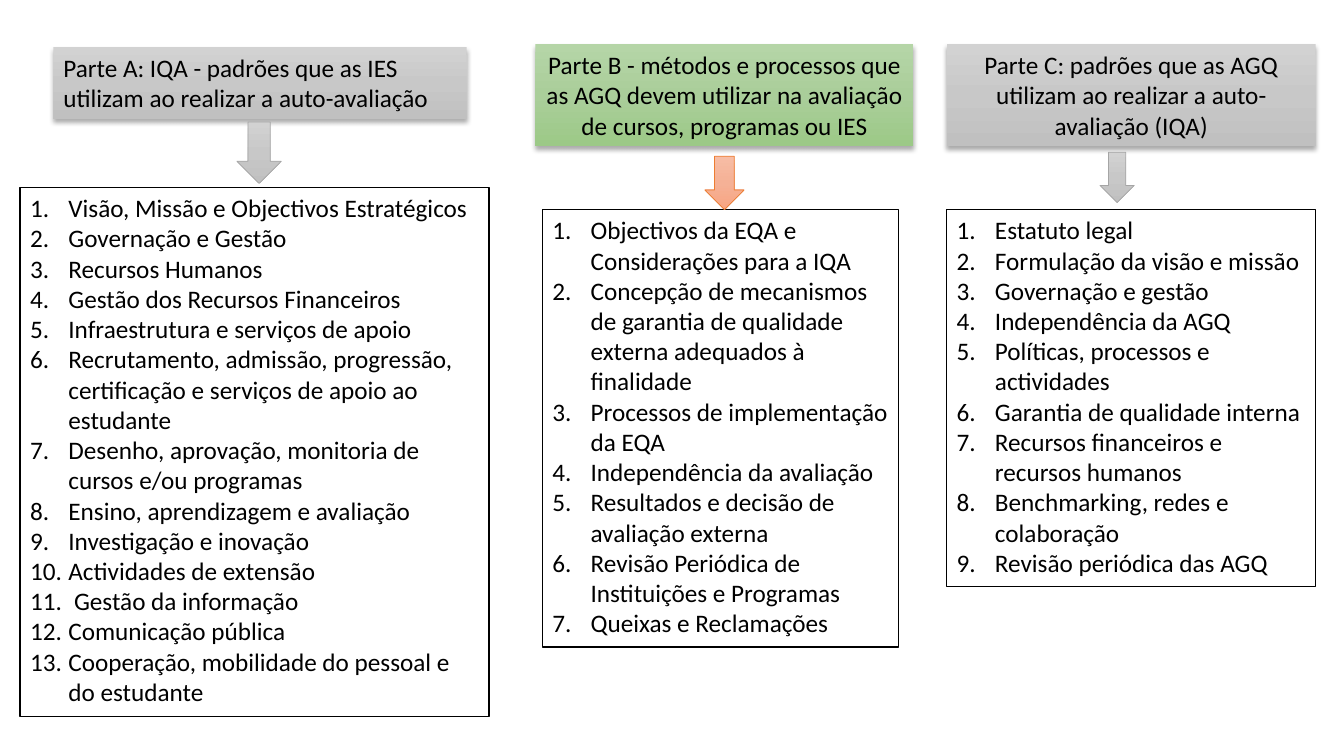
import copy

import pptx
import pptx.dml.color
import pptx.enum.shapes
import pptx.enum.text
import pptx.oxml
import pptx.oxml.ns
import pptx.util

Inches = pptx.util.Inches
MSO_SHAPE = pptx.enum.shapes.MSO_SHAPE
PP_ALIGN = pptx.enum.text.PP_ALIGN
qn = pptx.oxml.ns.qn

GREY = ("D2D2D2", "C8C8C8", "C0C0C0")
GREEN = ("B5D5A7", "AACE9A", "9CC987")
ORANGE = ("F7BDA5", "F5B196", "F8A582")

COLUMNS = [
    {
        "title": "Parte A: IQA - padrões que as IES utilizam ao realizar a auto-avaliação",
        "align": PP_ALIGN.LEFT,
        "header": (0.53, 0.47, 4.1, 0.71),
        "header_fill": GREY,
        "arrow": (2.35, 1.21, 0.44, 0.61),
        "arrow_fill": GREY,
        "arrow_line": "A5A5A5",
        "list": (0.2, 1.86, 4.65, 5.25),
        "items": [
            "Visão, Missão e Objectivos Estratégicos",
            "Governação e Gestão",
            "Recursos Humanos",
            "Gestão dos Recursos Financeiros",
            "Infraestrutura e serviços de apoio",
            "Recrutamento, admissão, progressão, certificação e serviços de apoio ao estudante",
            "Desenho, aprovação, monitoria de cursos e/ou programas",
            "Ensino, aprendizagem e avaliação",
            "Investigação e inovação",
            "Actividades de extensão",
            " Gestão da informação",
            "Comunicação pública",
            "Cooperação, mobilidade do pessoal e do estudante",
        ],
    },
    {
        "title": "Parte B - métodos e processos que as AGQ devem utilizar na avaliação "
                 "de cursos, programas ou IES",
        "align": PP_ALIGN.CENTER,
        "header": (5.31, 0.44, 3.75, 1.01),
        "header_fill": GREEN,
        "arrow": (6.99, 1.55, 0.39, 0.53),
        "arrow_fill": ORANGE,
        "arrow_line": "ED7D31",
        "list": (5.38, 2.08, 3.53, 4.34),
        "items": [
            "Objectivos da EQA e Considerações para a IQA",
            "Concepção de mecanismos de garantia de qualidade externa adequados à finalidade",
            "Processos de implementação da EQA",
            "Independência da avaliação",
            "Resultados e decisão de avaliação externa",
            "Revisão Periódica de Instituições e Programas",
            "Queixas e Reclamações",
        ],
    },
    {
        "title": "Parte C: padrões que as AGQ utilizam ao realizar a auto-avaliação (IQA)",
        "align": PP_ALIGN.CENTER,
        "header": (9.39, 0.44, 3.66, 1.01),
        "header_fill": GREY,
        "arrow": (10.91, 1.51, 0.34, 0.5),
        "arrow_fill": GREY,
        "arrow_line": "A5A5A5",
        "list": (9.39, 2.08, 3.66, 3.74),
        "items": [
            "Estatuto legal",
            "Formulação da visão e missão",
            "Governação e gestão",
            "Independência da AGQ",
            "Políticas, processos e actividades",
            "Garantia de qualidade interna",
            "Recursos financeiros e recursos humanos",
            "Benchmarking, redes e colaboração",
            "Revisão periódica das AGQ",
        ],
    },
]


def rgb(value):
    return pptx.dml.color.RGBColor.from_string(value)


def add_box(slide, kind, at):
    s = slide.shapes.add_shape(kind, *(Inches(v) for v in at))
    s.shadow.inherit = False
    return s


def set_line(s, color, width):
    s.line.color.rgb = rgb(color)
    s.line.width = pptx.util.Pt(width)


def set_gradient(s, colors):
    s.fill.gradient()
    s.fill.gradient_angle = 270
    stops = s._element.spPr.find(".//" + qn("a:gsLst"))
    stops.insert(1, copy.deepcopy(stops[0]))
    for stop, color, position in zip(s.fill.gradient_stops, colors, (0, 0.5, 1)):
        stop.color.rgb = rgb(color)
        stop.position = position


def add_shadow(s):
    effects = s._element.spPr.find(qn("a:effectLst"))
    effects.append(pptx.oxml.parse_xml(
        f'<a:outerShdw {pptx.oxml.ns.nsdecls("a")} blurRad="44450" dist="27940" '
        'dir="5400000" algn="ctr" rotWithShape="0">'
        '<a:srgbClr val="000000"><a:alpha val="32000"/></a:srgbClr></a:outerShdw>'))


def number_paragraph(p):
    pPr = p._p.get_or_add_pPr()
    pPr.set("marL", str(Inches(0.38)))
    pPr.set("indent", str(-Inches(0.38)))
    number = pptx.oxml.parse_xml(
        f'<a:buAutoNum {pptx.oxml.ns.nsdecls("a")} type="arabicPeriod"/>')
    pPr.append(number)


def write_text(s, texts, align, numbered=False):
    tf = s.text_frame
    tf.word_wrap = True
    tf.auto_size = pptx.enum.text.MSO_AUTO_SIZE.SHAPE_TO_FIT_TEXT
    tf.vertical_anchor = pptx.enum.text.MSO_ANCHOR.TOP
    for i, text in enumerate(texts):
        p = tf.add_paragraph() if i else tf.paragraphs[0]
        p.alignment = align
        if numbered:
            number_paragraph(p)
        r = p.add_run()
        r.text = text
        r.font.name = "Calibri"
        r.font.size = pptx.util.Pt(18)
        r.font.color.rgb = rgb("000000")


def add_list(slide, at, items):
    s = add_box(slide, MSO_SHAPE.RECTANGLE, at)
    s.fill.solid()
    s.fill.fore_color.rgb = rgb("FFFFFF")
    set_line(s, "000000", 1)
    write_text(s, items, PP_ALIGN.LEFT, numbered=True)


def add_header(slide, at, title, colors, align):
    s = add_box(slide, MSO_SHAPE.RECTANGLE, at)
    set_gradient(s, colors)
    s.line.fill.background()
    add_shadow(s)
    write_text(s, [title], align)


def add_arrow(slide, at, colors, line):
    s = add_box(slide, MSO_SHAPE.DOWN_ARROW, at)
    set_gradient(s, colors)
    set_line(s, line, 0.5)


def main():
    prs = pptx.Presentation()
    prs.slide_width = Inches(13.33)
    prs.slide_height = Inches(7.5)
    slide = prs.slides.add_slide(prs.slide_layouts[6])
    for column in COLUMNS:
        add_list(slide, column["list"], column["items"])
        add_header(slide, column["header"], column["title"],
                   column["header_fill"], column["align"])
        add_arrow(slide, column["arrow"], column["arrow_fill"], column["arrow_line"])
    prs.save("out.pptx")


if __name__ == "__main__":
    main()
